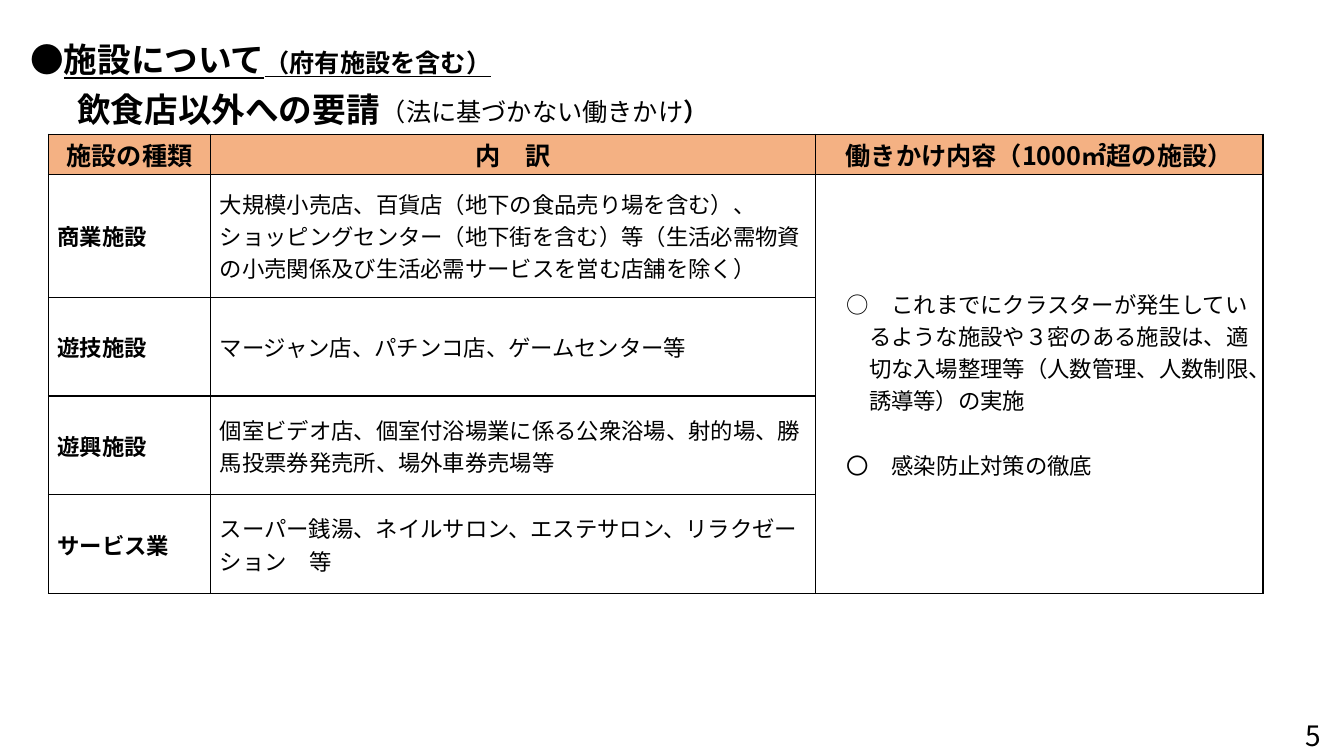
from dataclasses import dataclass

from lxml import etree
from pptx import Presentation
from pptx import util as u
from pptx.dml.color import RGBColor
from pptx.enum import lang, text
from pptx.oxml import ns


@dataclass(frozen=True)
class Theme:
    font: str = "Noto Sans CJK JP"
    ink: str = "000000"
    header: str = "F4B183"
    heading: int = 24
    page_number: int = 20
    label: int = 18
    body: int = 16
    border: int = 1


def add_span(para, content, theme, size, bold=False, underline=False):
    span = para.add_run()
    span.text = content
    font = span.font
    font.name = theme.font
    font.size = u.Pt(size)
    font.bold = bold
    font.underline = underline
    font.color.rgb = RGBColor.from_string(theme.ink)
    font.language_id = lang.MSO_LANGUAGE_ID.JAPANESE
    properties = span._r.get_or_add_rPr()
    etree.SubElement(properties, ns.qn("a:ea"), typeface=theme.font)


class SlideBuilder:
    def __init__(self, deck, theme):
        self.theme = theme
        self.page = deck.slides.add_slide(deck.slide_layouts[5])

    def fill_para(self, para, spans, align=text.PP_ALIGN.LEFT):
        para.alignment = align
        for content, style in spans:
            add_span(para, content, self.theme, **style)

    def title(self, place, spans):
        box = self.page.shapes.title
        box.left, box.top, box.width, box.height = map(u.Cm, place)
        frame = box.text_frame
        frame.word_wrap = True
        frame.auto_size = text.MSO_AUTO_SIZE.NONE
        frame.vertical_anchor = text.MSO_ANCHOR.TOP
        para = frame.paragraphs[0]
        para.line_spacing = 1.0
        para.space_before = u.Pt(0)
        self.fill_para(para, spans)

    def label(self, place, spans, align=text.PP_ALIGN.LEFT,
              anchor=text.MSO_ANCHOR.TOP, spacing=None):
        box = self.page.shapes.add_textbox(*map(u.Cm, place))
        frame = box.text_frame
        frame.word_wrap = True
        frame.vertical_anchor = anchor
        para = frame.paragraphs[0]
        para.line_spacing = spacing
        self.fill_para(para, spans, align)

    def table(self, left, top, widths, heights):
        frame = self.page.shapes.add_table(
            len(heights), len(widths), u.Cm(left), u.Cm(top),
            u.Cm(sum(widths)), u.Cm(sum(heights)))
        table = frame.table
        table.first_row = table.horz_banding = False
        for column, width in zip(table.columns, widths):
            column.width = u.Cm(width)
        for row, height in zip(table.rows, heights):
            row.height = u.Cm(height)
        for cell in table.iter_cells():
            self.borders(cell)
            cell.fill.background()
            cell.vertical_anchor = text.MSO_ANCHOR.MIDDLE
            cell.margin_left = cell.margin_right = u.Cm(0.03)
            cell.margin_top = cell.margin_bottom = u.Cm(0)
        return table

    def borders(self, cell):
        properties = cell._tc.get_or_add_tcPr()
        for side in ("lnL", "lnR", "lnT", "lnB"):
            line = etree.SubElement(properties, ns.qn("a:" + side),
                                    w=str(u.Pt(self.theme.border)))
            fill = etree.SubElement(line, ns.qn("a:solidFill"))
            etree.SubElement(fill, ns.qn("a:srgbClr"), val=self.theme.ink)

    def header_cell(self, cell, content):
        cell.fill.solid()
        cell.fill.fore_color.rgb = RGBColor.from_string(self.theme.header)
        style = dict(size=self.theme.label, bold=True)
        self.fill_para(cell.text_frame.paragraphs[0], [(content, style)],
                       text.PP_ALIGN.CENTER)

    def body_cell(self, cell, items, bold=False, indent=0.2, hanging=0, gap=0):
        frame = cell.text_frame
        style = dict(size=self.theme.body, bold=bold)
        for index, item in enumerate(items):
            para = frame.add_paragraph() if index else frame.paragraphs[0]
            para.space_before = u.Pt(gap if index else 0)
            properties = para._p.get_or_add_pPr()
            properties.set("marL", str(u.Cm(indent)))
            properties.set("indent", str(-u.Cm(hanging)))
            self.fill_para(para, [(item, style)])


HEADERS = ("施設の種類", "内　訳", "働きかけ内容（1000㎡超の施設）")
FACILITIES = (
    ("商業施設", "大規模小売店、百貨店（地下の食品売り場を含む）、ショッピングセンター"
     "（地下街を含む）等（生活必需物資の小売関係及び生活必需サービスを営む店舗を除く）"),
    ("遊技施設", "マージャン店、パチンコ店、ゲームセンター等"),
    ("遊興施設", "個室ビデオ店、個室付浴場業に係る公衆浴場、射的場、"
     "勝馬投票券発売所、場外車券売場等"),
    ("サービス業", "スーパー銭湯、ネイルサロン、エステサロン、リラクゼーション　等"),
)
REQUESTS = (
    "○　これまでにクラスターが発生しているような施設や３密のある施設は、"
    "適切な入場整理等（人数管理、人数制限、誘導等）の実施",
    "〇　感染防止対策の徹底",
)


def main():
    theme = Theme()
    deck = Presentation()
    deck.slide_width, deck.slide_height = u.Cm(33.87), u.Cm(19.05)
    slide = SlideBuilder(deck, theme)

    heading = dict(size=theme.heading, bold=True)
    note = dict(size=theme.label)
    slide.title((0.51, 0.86, 18.77, 1.27), [
        ("●", heading),
        ("施設について", dict(heading, underline=True)),
        ("（府有施設を含む）", dict(note, bold=True, underline=True)),
    ])
    slide.label((1.7, 2.11, 12.75, 1.27), [("飲食店以外への要請", heading)])
    slide.label((9.35, 2.26, 9.2, 1.07), [
        ("（法に基づかない働きかけ", note),
        ("）", dict(note, bold=True)),
    ], spacing=u.Pt(23))

    table = slide.table(1.22, 3.38, (4.09, 15.24, 11.28),
                        (1.01, 3.1, 2.49, 2.49, 2.49))
    for column, content in enumerate(HEADERS):
        slide.header_cell(table.cell(0, column), content)
    for row, (kind, details) in enumerate(FACILITIES, start=1):
        slide.body_cell(table.cell(row, 0), [kind], bold=True)
        slide.body_cell(table.cell(row, 1), [details], indent=0.2)
    requests = table.cell(1, 2)
    requests.merge(table.cell(len(FACILITIES), 2))
    slide.body_cell(requests, REQUESTS, indent=1.32, hanging=0.56, gap=23)

    slide.label((25.93, 18.01, 7.62, 1.02),
                [("5", dict(size=theme.page_number))],
                text.PP_ALIGN.RIGHT, text.MSO_ANCHOR.MIDDLE)
    deck.save("out.pptx")


if __name__ == "__main__":
    main()
